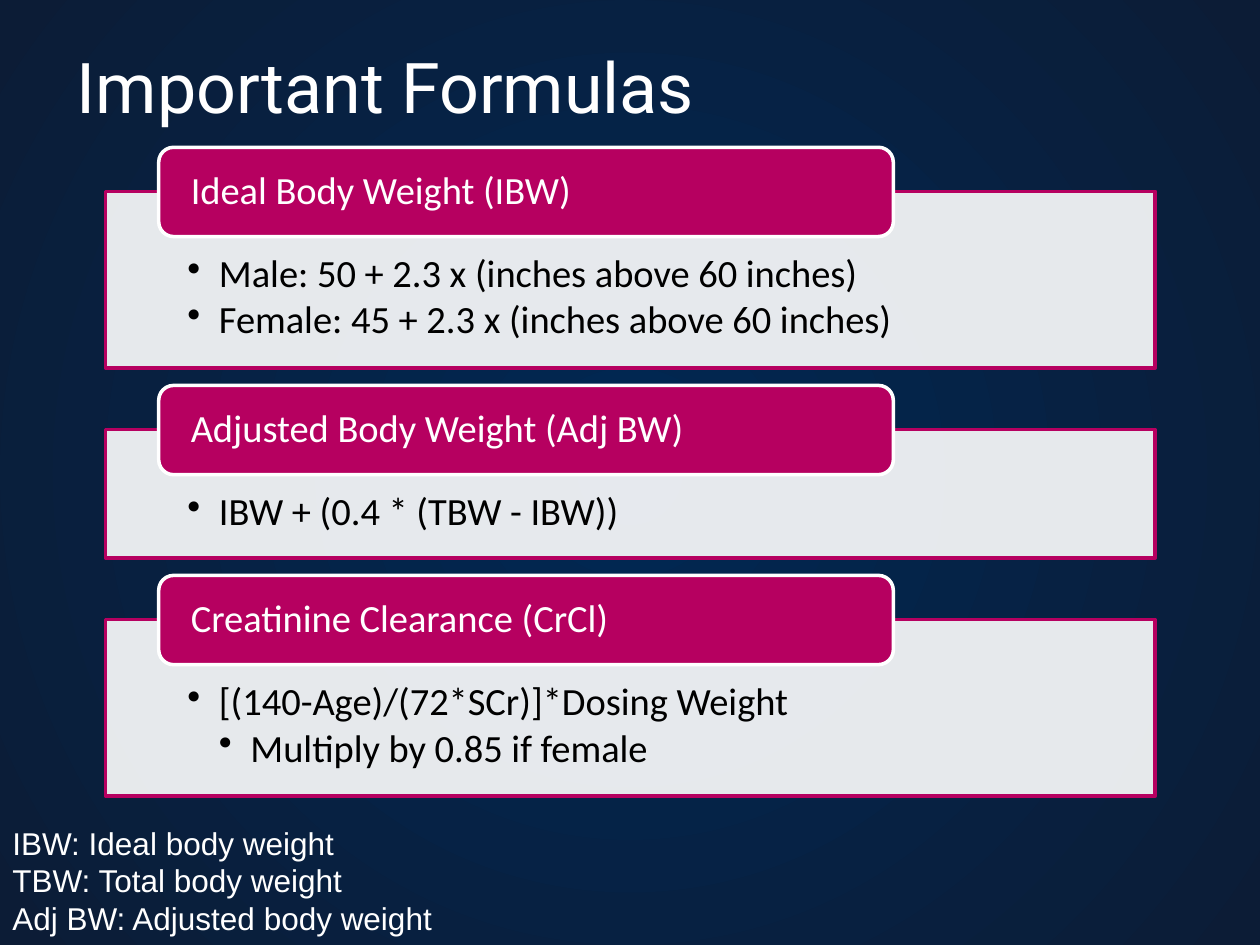
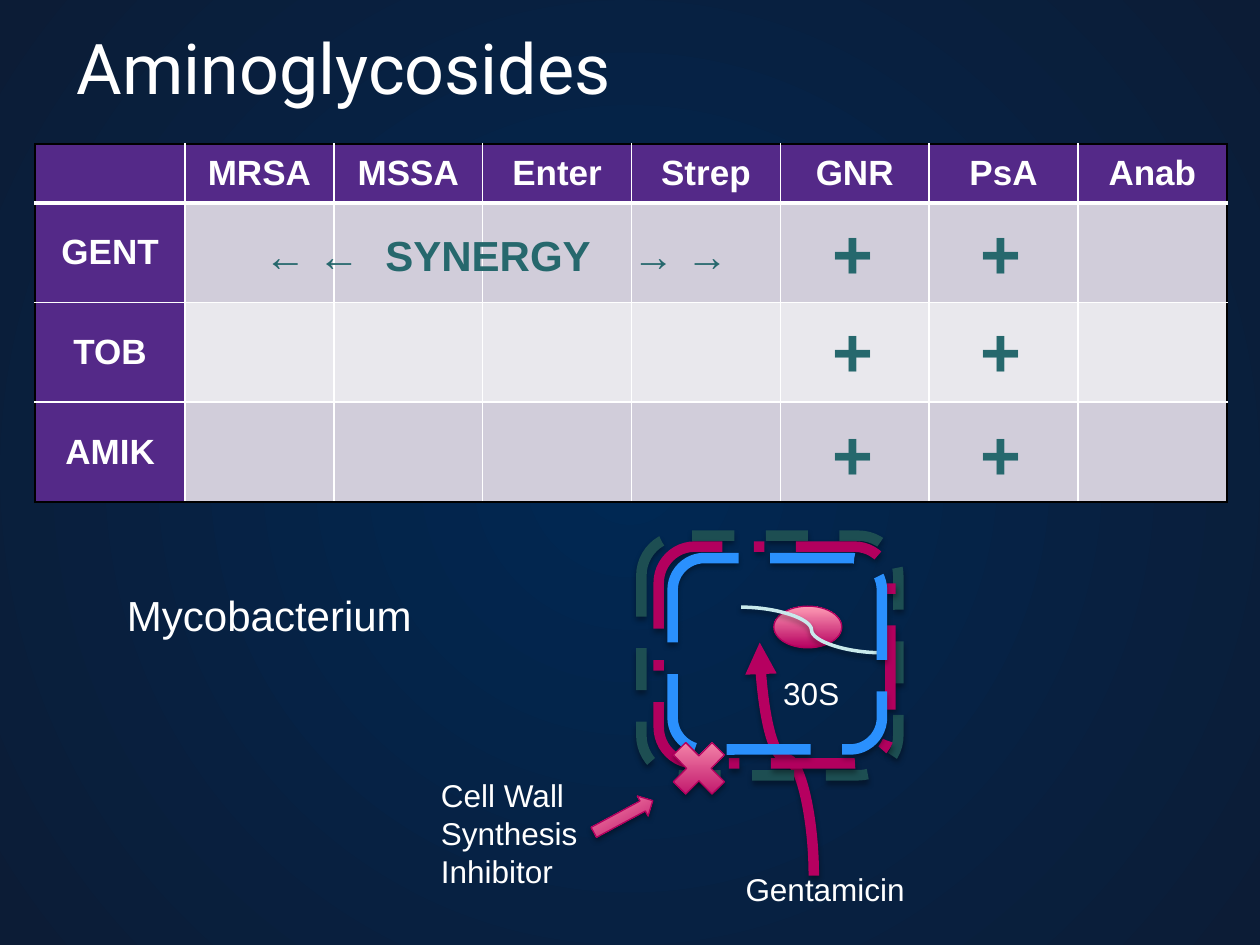
from lxml import etree
from pptx import Presentation
from pptx.dml.color import RGBColor
from pptx.enum.dml import MSO_LINE
from pptx.enum.shapes import MSO_CONNECTOR, MSO_SHAPE
from pptx.enum.text import MSO_ANCHOR, PP_ALIGN
from pptx.oxml.ns import qn
from pptx.util import Cm, Pt

WHITE = RGBColor(0xFF, 0xFF, 0xFF)
BLACK = RGBColor(0, 0, 0)
NAVY = RGBColor(0x00, 0x28, 0x53)
NIGHT = RGBColor(0x0C, 0x1C, 0x36)
BERRY = RGBColor(0xB6, 0x00, 0x60)
EDGE = RGBColor(0xB2, 0x00, 0x5E)
ROSE = RGBColor(0xFF, 0x9C, 0xB5)
PURPLE = RGBColor(0x54, 0x29, 0x88)
MAUVE = RGBColor(0xD1, 0xCD, 0xDA)
PALE = RGBColor(0xE9, 0xE8, 0xED)
TEAL = RGBColor(0x26, 0x68, 0x6D)
PINE = RGBColor(0x1D, 0x4E, 0x52)
BLUE = RGBColor(0x2A, 0x90, 0xFD)
ICE = RGBColor(0xC9, 0xEA, 0xEC)

RECT, ROUND = MSO_SHAPE.RECTANGLE, MSO_SHAPE.ROUNDED_RECTANGLE
OVAL, ARROW, CROSS = MSO_SHAPE.OVAL, MSO_SHAPE.RIGHT_ARROW, MSO_SHAPE.MATH_MULTIPLY
DASH, LONG, MIXED = MSO_LINE.DASH, MSO_LINE.LONG_DASH, MSO_LINE.LONG_DASH_DOT
CURVE = MSO_CONNECTOR.CURVE
TOP, MIDDLE = MSO_ANCHOR.TOP, MSO_ANCHOR.MIDDLE
LEFT, CENTER = PP_ALIGN.LEFT, PP_ALIGN.CENTER

TITLE = {"name": "Roboto", "size": Pt(40)}
NOTE = {"name": "Arial", "size": Pt(18)}
LARGE = {"name": "Arial", "size": Pt(24)}
HEAD = {"name": "Arial", "size": Pt(20), "bold": True}
SPAN = {"name": "Arial", "size": Pt(24), "bold": True}
PLUS = {"name": "Arial", "size": Pt(40), "bold": True}
BODY = {"name": "Calibri", "size": Pt(22)}
TIGHT = {"line_spacing": 0.9, "space_after": Pt(2.7)}

CARDS = [
    ("Ideal Body Weight (IBW)",
     [(1, "Male: 50 + 2.3 x (inches above 60 inches)"),
      (1, "Female: 45 + 2.3 x (inches above 60 inches)")]),
    ("Adjusted Body Weight (Adj BW)", [(1, "IBW + (0.4 * (TBW - IBW))")]),
    ("Creatinine Clearance (CrCl)",
     [(1, "[(140-Age)/(72*SCr)]*Dosing Weight"),
      (2, "Multiply by 0.85 if female")]),
]
TERMS = ["IBW: Ideal body weight", "TBW: Total body weight",
         "Adj BW: Adjusted body weight"]
BUGS = ["", "MRSA", "MSSA", "Enter", "Strep", "GNR", "PsA", "Anab"]
DRUGS = ["GENT", "TOB", "AMIK"]


def put(item, form):
    """Set each format value on an object."""
    for name, value in form.items():
        setattr(item, name, value)


def sub(parent, tag, **attrs):
    """Append a drawing element and return it."""
    node = etree.SubElement(parent, qn(tag))
    for name, value in attrs.items():
        node.set(name, str(value))
    return node


def write(frame, rows, font, color=WHITE, form=None):
    """Fill a text frame with one paragraph per row of (level, text)."""
    for i, (level, text) in enumerate(rows):
        para = frame.add_paragraph() if i else frame.paragraphs[0]
        if level:
            props = para._p.get_or_add_pPr()
            props.set("marL", str(Cm(0.635 * level)))
            props.set("indent", str(-Cm(0.635)))
            sub(props, "a:buChar", char="•")
        put(para, {"alignment": LEFT, **(form or {})})
        run = para.add_run()
        run.text = text
        put(run.font, font)
        run.font.color.rgb = color


def label(slide, box, lines, font, color=WHITE, align=LEFT, wrap=True):
    """Add a text box and return its frame."""
    frame = slide.shapes.add_textbox(*map(Cm, box)).text_frame
    frame.word_wrap = wrap
    write(frame, [(0, line) for line in lines], font, color, {"alignment": align})
    return frame


def blend(fill, first, last):
    """Give a fill a two-colour gradient."""
    fill.gradient()
    for stop, color in zip(fill.gradient_stops, (first, last)):
        stop.color.rgb = color


def cast(item):
    """Give a shape or connector a soft shadow below."""
    props = item._element.spPr
    effect = props.find(qn("a:effectLst"))
    if effect is None:
        effect = sub(props, "a:effectLst")
    shade = sub(effect, "a:outerShdw", blurRad=Pt(3.1), dist=Pt(1.8),
                dir=5400000, rotWithShape=0)
    sub(sub(shade, "a:srgbClr", val=BLACK), "a:alpha", val=35000)


def shape(slide, kind, box, color, width):
    """Add an outlined preset shape without fill."""
    item = slide.shapes.add_shape(kind, *map(Cm, box))
    item.shadow.inherit = False
    item.fill.background()
    item.line.color.rgb = color
    item.line.width = Pt(width)
    return item


def glossy(slide, kind, box, turn=0):
    """Add a pink gradient shape with a shadow."""
    item = shape(slide, kind, box, EDGE, 0.75)
    blend(item.fill, BERRY, ROSE)
    item.fill.gradient_angle = 90
    item.rotation = turn
    cast(item)


def wall(slide, box, color, dash):
    """Add one dashed layer of the cell wall."""
    item = shape(slide, ROUND, box, color, 6)
    item.line.dash_style = dash
    cast(item)


def curve(slide, ends, color, width):
    """Add a curved connector with a shadow."""
    item = slide.shapes.add_connector(CURVE, *map(Cm, ends))
    item.line.color.rgb = color
    item.line.width = Pt(width)
    cast(item)
    return item


def card(slide, top, high, name, rows):
    """Add a formula panel with its heading tab."""
    panel = shape(slide, RECT, (2.13, top, 21.16, high), BERRY, 2)
    panel.fill.solid()
    panel.fill.fore_color.rgb = WHITE
    tint = panel._element.spPr.find(qn("a:solidFill"))
    sub(tint[0], "a:alpha", val=90000)
    put(panel.text_frame, {
        "margin_left": Cm(1.65), "margin_right": Cm(1.65),
        "margin_top": Cm(1.27), "margin_bottom": Cm(0.43),
        "vertical_anchor": TOP, "word_wrap": True})
    write(panel.text_frame, rows, BODY, BLACK, TIGHT)
    tab = shape(slide, ROUND, (3.2, top - 0.89, 14.81, 1.8), WHITE, 2)
    tab.fill.solid()
    tab.fill.fore_color.rgb = BERRY
    put(tab.text_frame, {
        "margin_left": Cm(0.56), "margin_right": Cm(0.56),
        "margin_top": 0, "margin_bottom": 0,
        "vertical_anchor": MIDDLE, "word_wrap": True})
    write(tab.text_frame, [(0, name)], BODY, WHITE, {"line_spacing": 0.9})


def border(cell, side, color, width):
    """Draw one border of a table cell."""
    line = sub(cell._tc.get_or_add_tcPr(), "a:ln" + side, w=Pt(width))
    sub(sub(line, "a:solidFill"), "a:srgbClr", val=color)


def grid(slide):
    """Add the table of drugs against bacteria."""
    rows, cols = len(DRUGS) + 1, len(BUGS)
    table = slide.shapes.add_table(
        rows, cols, Cm(0.71), Cm(2.9), Cm(24.02), Cm(7.22)).table
    for c in range(cols):
        table.columns[c].width = Cm(3 if c else 3.02)
    for r in range(rows):
        table.rows[r].height = Cm(2.01 if r else 1.19)
        for c in range(cols):
            cell = table.cell(r, c)
            outer = {"L": c == 0, "R": c == cols - 1,
                     "T": r == 0, "B": r == rows - 1}
            for side, black in outer.items():
                thick = (r, side) in ((0, "B"), (1, "T"))
                border(cell, side, BLACK if black else WHITE, 3 if thick else 1)
            cell.fill.solid()
            band = MAUVE if r % 2 else PALE
            cell.fill.fore_color.rgb = band if r and c else PURPLE
            cell.vertical_anchor = MIDDLE
            text = BUGS[c] if r == 0 else DRUGS[r - 1] if c == 0 else ""
            if text:
                write(cell.text_frame, [(0, text)], HEAD, WHITE,
                      {"alignment": CENTER})


def page(deck, title, top):
    """Add a blank slide with its title."""
    slide = deck.slides.add_slide(deck.slide_layouts[6])
    label(slide, (1.3, top, 22.83, 3.18), [title], TITLE)
    return slide


def backdrop(deck):
    """Give all slides a round navy gradient."""
    master = deck.slide_master
    blend(master.background.fill, NAVY, NIGHT)
    grad = next(master.element.iter(qn("a:gradFill")))
    for line in grad.findall(qn("a:lin")):
        grad.remove(line)
    ring = sub(grad, "a:path", path="circle")
    sub(ring, "a:fillToRect", l=50000, t=50000, r=50000, b=50000)


def formulas(deck):
    """Build the slide of formulas."""
    slide = page(deck, "Important Formulas", 0.76)
    label(slide, (0, 16.48, 9.04, 2.57), TERMS, NOTE, wrap=False)
    top = 3.86
    for name, rows in CARDS:
        high = 1.62 + 0.97 * len(rows)
        card(slide, top, high, name, rows)
        top += high + 1.24


def cell_art(slide):
    """Draw the bacterial cell and the drugs that act on it."""
    glossy(slide, OVAL, (15.6, 12.22, 1.37, 0.84))
    curve(slide, (14.94, 12.24, 17.78, 13.16), ICE, 2)
    label(slide, (15.54, 13.46, 2.24, 0.84), ["30S"], NOTE)
    label(slide, (8.64, 15.52, 3.84, 2.13), ["Cell Wall Synthesis Inhibitor"], NOTE)
    glossy(slide, ARROW, (11.89, 16.23, 1.35, 0.46), 331.7)
    label(slide, (14.78, 17.42, 4.14, 0.84), ["Gentamicin"], NOTE)
    entry = curve(slide, (13.51, 15.85, 18.21, 14.76), BERRY, 6)
    props = entry._element.spPr
    props.find(qn("a:xfrm")).set("rot", "16200000")
    sub(props.find(qn("a:ln")), "a:tailEnd", type="triangle")
    wall(slide, (12.93, 10.8, 5.18, 4.83), PINE, DASH)
    wall(slide, (13.28, 11.02, 4.67, 4.37), EDGE, MIXED)
    wall(slide, (13.56, 11.25, 4.22, 3.86), BLUE, LONG)
    glossy(slide, CROSS, (13.34, 14.73, 1.5, 1.52))


def drugs(deck):
    """Build the slide of aminoglycosides."""
    slide = page(deck, "Aminoglycosides", 0.38)
    grid(slide)
    for top in (4.09, 6.07, 8.15):
        for left in (15.75, 18.72):
            label(slide, (left, top, 2.9, 1.96), ["+"], PLUS, TEAL, CENTER)
    frame = label(slide, (5.08, 4.5, 10.57, 1.27),
                  ["← ←\tSYNERGY\t→ →"], SPAN, TEAL)
    tabs = sub(frame.paragraphs[0]._p.get_or_add_pPr(), "a:tabLst")
    for stop in (2.44, 7.42):
        sub(tabs, "a:tab", pos=Cm(stop), algn="l")
    label(slide, (2.31, 11.76, 6.32, 1.27), ["Mycobacterium"], LARGE, wrap=False)
    cell_art(slide)


def main():
    """Build and save the deck."""
    deck = Presentation()
    deck.slide_width, deck.slide_height = Cm(25.4), Cm(19.05)
    backdrop(deck)
    formulas(deck)
    drugs(deck)
    deck.save("out.pptx")


if __name__ == "__main__":
    main()
